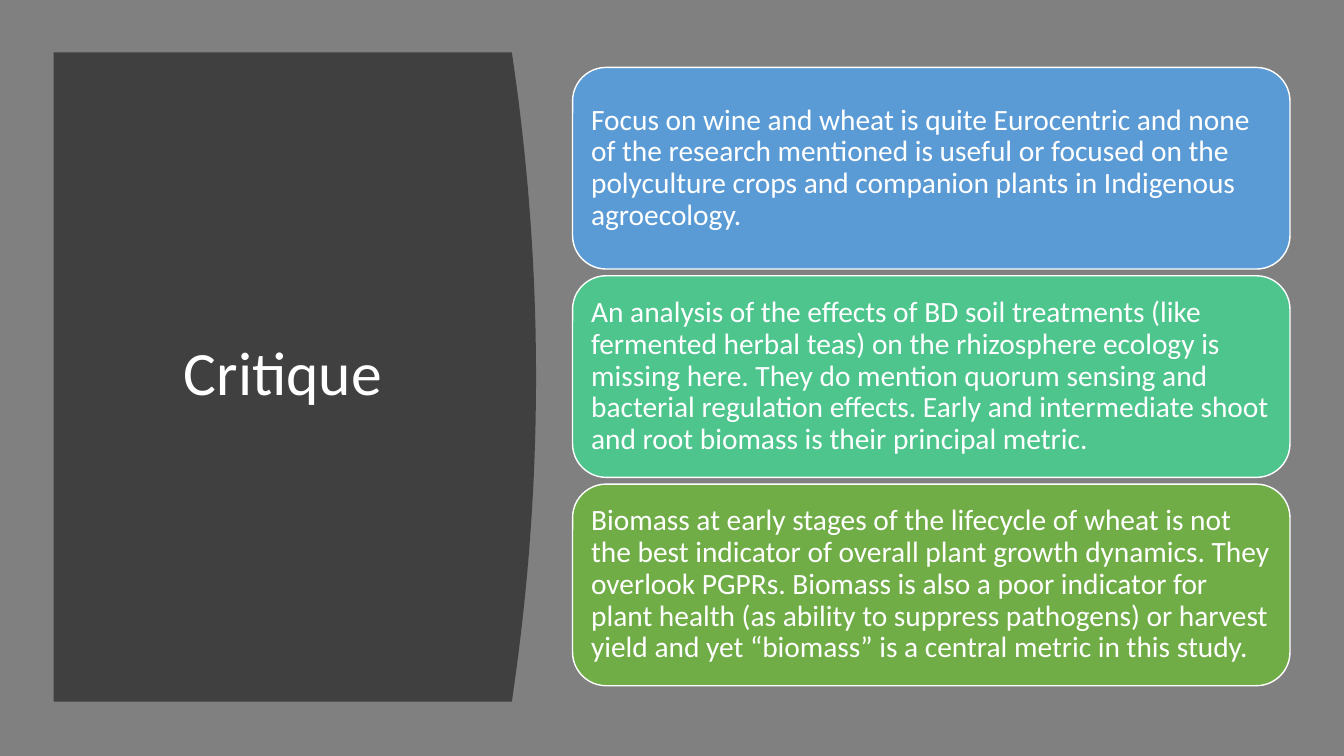
from pptx import Presentation
from pptx import util as u
from pptx.dml.color import RGBColor
from pptx.enum import shapes, text

COLORS = {
    "background": "808080",
    "panel": "404040",
    "text": "FFFFFF",
    "blue": "5B9BD5",
    "teal": "4DC58D",
    "green": "70AD47",
}

POINTS = [
    ("blue", "Focus on wine and wheat is quite Eurocentric and none of the research "
             "mentioned is useful or focused on the polyculture crops and companion "
             "plants in Indigenous agroecology."),
    ("teal", "An analysis of the effects of BD soil treatments (like fermented herbal "
             "teas) on the rhizosphere ecology is missing here. They do mention quorum "
             "sensing and bacterial regulation effects. Early and intermediate shoot and "
             "root biomass is their principal metric."),
    ("green", "Biomass at early stages of the lifecycle of wheat is not the best "
              "indicator of overall plant growth dynamics. They overlook PGPRs. Biomass "
              "is also a poor indicator for plant health (as ability to suppress "
              "pathogens) or harvest yield and yet “biomass” is a central metric in "
              "this study."),
]


class SlideBuilder:
    font = "Calibri"

    def __init__(self, prs):
        self.s = prs.slides.add_slide(prs.slide_layouts[5])
        self.fill(self.s.background, "background")

    def fill(self, target, color):
        target.fill.solid()
        target.fill.fore_color.rgb = RGBColor.from_string(COLORS[color])

    def set_text(self, sp, words, size, align):
        tf = sp.text_frame
        tf.text = words
        tf.word_wrap = True
        tf.auto_size = text.MSO_AUTO_SIZE.NONE
        tf.vertical_anchor = text.MSO_ANCHOR.MIDDLE
        p = tf.paragraphs[0]
        p.alignment = align
        p.line_spacing = 0.9
        r = p.runs[0]
        r.font.name = self.font
        r.font.size = u.Pt(size)
        r.font.color.rgb = RGBColor.from_string(COLORS["text"])

    def panel(self, left, top, right, bottom, bulge, steps=40):
        """Draw a block whose right side bows outward as a parabola."""
        edge = []
        for i in range(steps + 1):
            t = i / steps
            x = right + bulge * 4 * t * (1 - t)
            edge.append((u.Cm(x), u.Cm(top + (bottom - top) * t)))
        fb = self.s.shapes.build_freeform(u.Cm(left), u.Cm(top))
        fb.add_line_segments(edge + [(u.Cm(left), u.Cm(bottom))], close=True)
        sp = fb.convert_to_shape()
        sp.shadow.inherit = False
        self.fill(sp, "panel")
        sp.line.fill.background()

    def title(self, words, left, top, width, height):
        sp = self.s.shapes.title
        sp.left, sp.top, sp.width, sp.height = map(u.Cm, (left, top, width, height))
        self.set_text(sp, words, 44, text.PP_ALIGN.CENTER)
        # Bring the title in front of the panel
        self.s.shapes._spTree.append(sp._element)

    def card(self, words, color, left, top, width, height):
        sp = self.s.shapes.add_shape(shapes.MSO_SHAPE.ROUNDED_RECTANGLE,
                                     *map(u.Cm, (left, top, width, height)))
        sp.shadow.inherit = False
        self.fill(sp, color)
        sp.line.color.rgb = RGBColor.from_string(COLORS["text"])
        sp.line.width = u.Pt(1)
        tf = sp.text_frame
        self.set_text(sp, words, 21, text.PP_ALIGN.LEFT)
        tf.margin_left = tf.margin_right = u.Cm(0.22)
        tf.margin_top = tf.margin_bottom = u.Cm(0.22)


def main():
    prs = Presentation()
    prs.slide_width, prs.slide_height = u.Cm(33.87), u.Cm(19.05)

    slide = SlideBuilder(prs)
    slide.panel(left=1.35, top=1.32, right=12.9, bottom=17.68, bulge=0.61)
    slide.title("Critique", 2.38, 2.82, 9.5, 13.3)

    card_height, gap = 5.08, 0.17
    for i, (color, words) in enumerate(POINTS):
        slide.card(words, color, 14.43, 1.7 + i * (card_height + gap), 18.08, card_height)

    prs.save("out.pptx")


if __name__ == "__main__":
    main()
